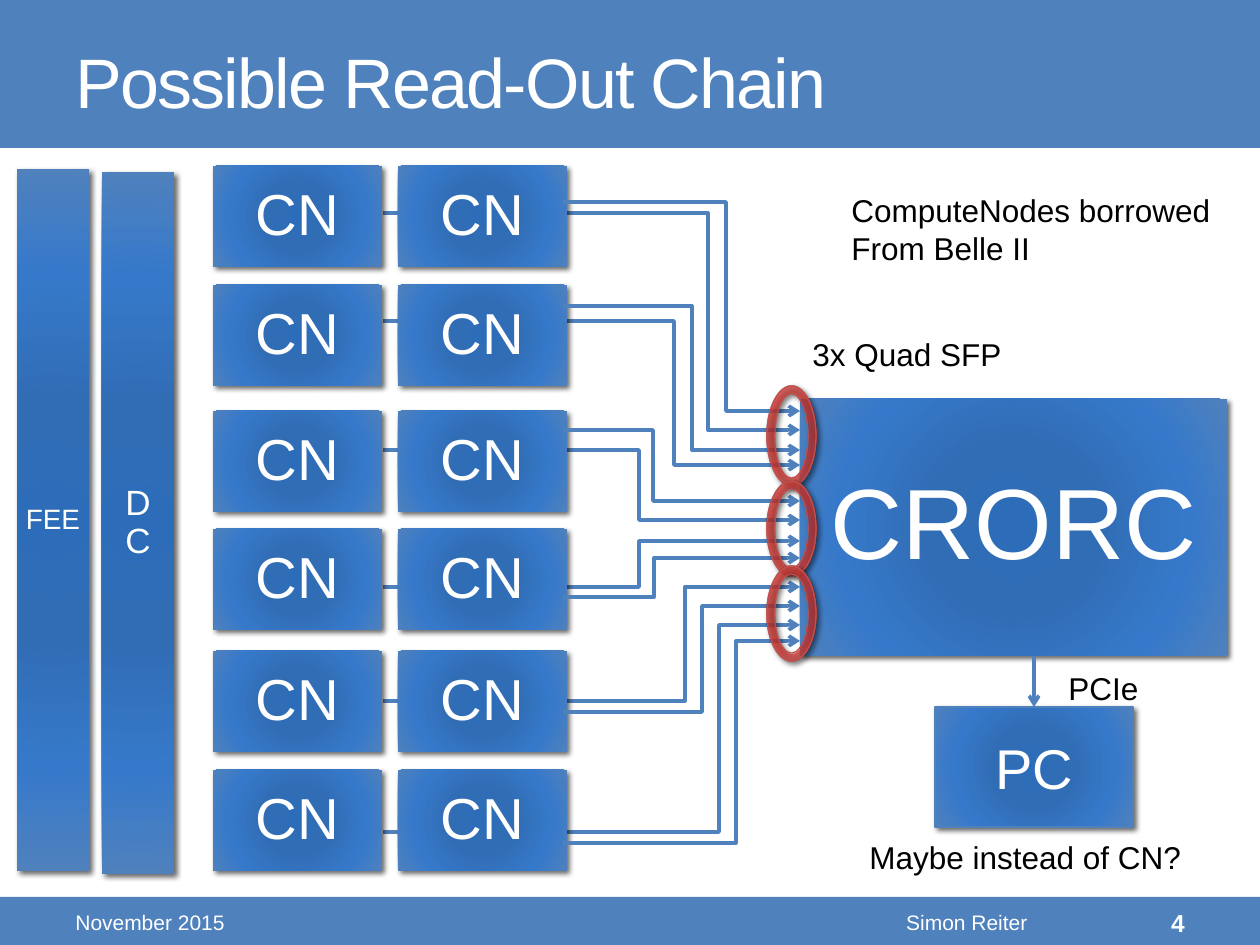
from pptx import Presentation
from pptx.dml.color import RGBColor
from pptx.enum.shapes import MSO_CONNECTOR, MSO_SHAPE
from pptx.enum.text import MSO_ANCHOR, PP_ALIGN
from pptx.oxml import parse_xml
from pptx.oxml.ns import nsdecls
from pptx.util import Emu, Pt

HUES = {"blue": "4F81BD", "red": "C0504D", "white": "FFFFFF", "black": "000000"}
GLOWS = {
    "blue": ["2C6CB9", "316DB5", "3679CA", "4F81BD"],
    "red": ["BD2D29", "B8322E", "CD3834", "C0504D"],
}
STOPS = [0, 34, 70, 100]


def px(size):
    return Emu(round(size * 914400 / 126))


def hue(name):
    return RGBColor.from_string(HUES[name])


def node(tag, inner=""):
    """Make a DrawingML element; tag may carry attributes."""
    name = tag.split()[0]
    return parse_xml(f"<a:{tag} {nsdecls('a')}>{inner}</a:{name}>")


class Board:
    font = "Arial"
    wide = 2.08
    edge = 0.75

    def __init__(self, slide):
        self.slide = slide

    def letter(self, shape, text, size, color, align=PP_ALIGN.LEFT,
               anchor=MSO_ANCHOR.MIDDLE, inset=None, lead=None, bold=False):
        """Put styled text into a shape."""
        frame = shape.text_frame
        frame.text = text
        frame.word_wrap = True
        frame.vertical_anchor = anchor
        if inset is not None:
            frame.margin_left = frame.margin_right = px(inset)
            frame.margin_top = frame.margin_bottom = px(inset)
        for para in frame.paragraphs:
            para.alignment = align
            if lead:
                para.line_spacing = lead
            for run in para.runs:
                run.font.name = self.font
                run.font.size = Pt(size)
                run.font.bold = bold
                run.font.color.rgb = hue(color)

    def label(self, box, text, size, color, **style):
        shape = self.slide.shapes.add_textbox(*map(px, box))
        self.letter(shape, text, size, color, **style)
        return shape

    def band(self, box):
        shape = self.slide.shapes.add_shape(MSO_SHAPE.RECTANGLE, *map(px, box))
        shape.shadow.inherit = False
        shape.fill.solid()
        shape.fill.fore_color.rgb = hue("blue")
        shape.line.fill.background()

    def glow(self, kind, box, color, lined, alpha=100):
        """Add a shape with a radial gradient and a soft shadow."""
        shape = self.slide.shapes.add_shape(kind, *map(px, box))
        if lined:
            shape.line.color.rgb = hue(color)
            shape.line.width = Pt(self.edge)
        else:
            shape.line.fill.background()
        stops = "".join(
            f'<a:gs pos="{pos}000"><a:srgbClr val="{tone}">'
            f'<a:alpha val="{alpha}000"/></a:srgbClr></a:gs>'
            for pos, tone in zip(STOPS, GLOWS[color]))
        props = shape._element.spPr
        props.insert(2, node(
            'gradFill rotWithShape="1"',
            f'<a:gsLst>{stops}</a:gsLst><a:path path="circle"><a:fillToRect '
            'l="100000" t="100000" r="100000" b="100000"/></a:path>'))
        props.append(node(
            "effectLst",
            '<a:outerShdw blurRad="38100" dist="25400" dir="2700000" '
            'rotWithShape="0"><a:srgbClr val="000000"><a:alpha val="60000"/>'
            '</a:srgbClr></a:outerShdw>'))
        return shape

    def block(self, box, text, size, inset=None, lead=0.9, lined=False):
        shape = self.glow(MSO_SHAPE.RECTANGLE, box, "blue", lined)
        self.letter(shape, text, size, "white", align=PP_ALIGN.CENTER,
                    inset=inset, lead=lead)
        return shape

    def ring(self, box, ratio):
        shape = self.glow(MSO_SHAPE.DONUT, box, "red", True, alpha=80)
        shape.adjustments[0] = ratio

    def arrow(self, kind, *ends):
        line = self.slide.shapes.add_connector(kind, *map(px, ends))
        line.line.color.rgb = hue("blue")
        line.line.width = Pt(self.wide)
        line.line._get_or_add_ln().append(node('tailEnd type="arrow"'))
        line._element.spPr.append(node("effectLst"))
        return line

    def wire(self, left, top, bend, end, right=800):
        """Draw an elbow arrow whose upright part stands at x = bend."""
        line = self.arrow(MSO_CONNECTOR.ELBOW, left, top, right, end)
        part = round((bend - left) / (right - left) * 100000)
        geom = line._element.spPr.prstGeom
        geom.get_or_add_avLst().append(
            node(f'gd name="adj1" fmla="val {part}"'))


def main():
    deck = Presentation()
    deck.slide_width, deck.slide_height = px(1260), px(945)
    board = Board(deck.slides.add_slide(deck.slide_layouts[6]))

    board.band((0, 897, 1260, 50))
    board.band((0, 0, 1260, 148))
    title = board.label((63, 13, 1134, 136), "Possible Read-Out Chain", 40, "white")
    title.text_frame.paragraphs[0].runs[0]._r.get_or_add_rPr().set("spc", "-100")

    # Wires from the first column run behind the second one
    for top, bend, end in [(213, 708, 430), (321, 674, 465), (450, 639, 520),
                           (587, 639, 541), (701, 685, 587), (832, 719, 625)]:
        board.wire(383, top, bend, end)
    for top in (166, 285, 411, 529, 651, 770):
        for left in (213, 398):
            board.block((left, top, 169, 101), "CN", 33, inset=18)
    board.block((800, 399, 427, 257), "CRORC", 57, inset=30)
    for top, bend, end in [(202, 726, 411), (306, 692, 450), (430, 653, 501),
                           (597, 654, 558), (712, 702, 606), (843, 736, 641)]:
        board.wire(563, top, bend, end)

    board.label((63, 900, 399, 45), "November 2015", 12, "white")
    board.label((473, 900, 567, 45), "Simon Reiter", 12, "white", align=PP_ALIGN.RIGHT)
    board.label((1050, 900, 147, 45), "4", 14, "white", align=PP_ALIGN.RIGHT, bold=True)

    for top, high in [(386, 100), (481, 95), (566, 95)]:
        board.ring((767, top, 49, high), 0.16)
    host = board.block((935, 707, 198, 120), "PC", 32, lead=None, lined=True)
    link = board.arrow(MSO_CONNECTOR.STRAIGHT, 1034, 656, 1034, 707)
    link.end_connect(host, 0)

    for box, text in [
        ((800, 329, 357, 50), "3x Quad SFP"),
        ((1056, 663, 100, 50), "PCIe"),
        ((839, 185, 396, 89), "ComputeNodes borrowed\nFrom Belle II"),
        ((857, 832, 346, 50), "Maybe instead of CN?"),
    ]:
        board.label(box, text, 18, "black", anchor=MSO_ANCHOR.TOP)

    board.block((17, 169, 72, 702), "FEE", 16, inset=8)
    board.block((102, 172, 72, 702), "DC", 20, inset=11)
    deck.save("out.pptx")


if __name__ == "__main__":
    main()
